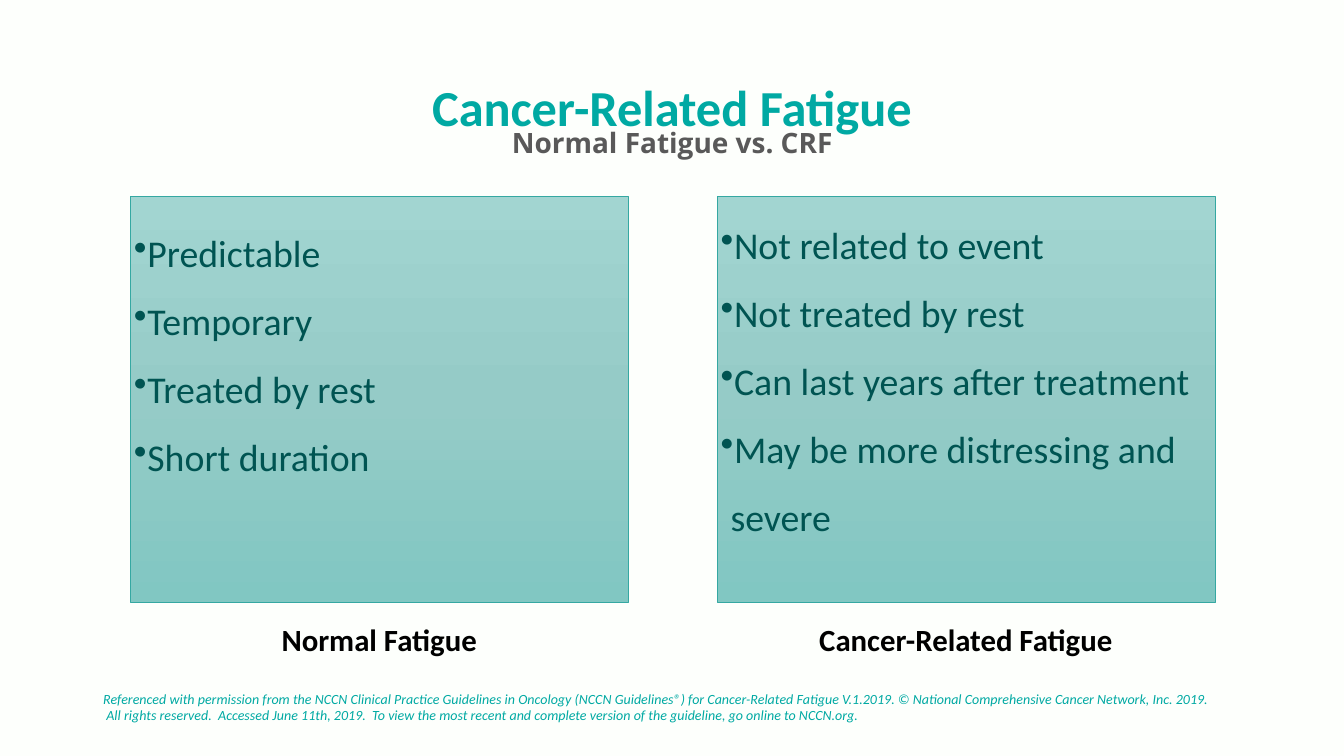
from copy import deepcopy

from lxml import etree
from pptx import Presentation
from pptx.dml import color as col
from pptx.enum import shapes, text
from pptx.oxml import ns
from pptx.util import Cm, Pt

TEAL, DEEP, GRAY = "00A9A3", "005452", "595959"
TOP, WIDE, HIGH = 9.91, 25.07, 20.42


def rgb(code):
    """Turn a hex string into a colour."""
    return col.RGBColor.from_string(code)


def write(frame, *lines, size, color, font="Calibri", bold=False,
          italic=False, align=text.PP_ALIGN.LEFT, space=None, bullet=None,
          anchor=text.MSO_ANCHOR.TOP, wrap=True):
    """Fill a text frame with formatted paragraphs."""
    frame.word_wrap = wrap
    frame.vertical_anchor = anchor
    frame.auto_size = text.MSO_AUTO_SIZE.NONE
    for i, line in enumerate(lines):
        para = frame.add_paragraph() if i else frame.paragraphs[0]
        para.text = line
        para.alignment = align
        if space:
            para.line_spacing = space
        if bullet:
            props = para._p.get_or_add_pPr()
            props.set("marL", str(Cm(0.5)))
            props.set("indent", str(-Cm(0.5)))
            etree.SubElement(props, ns.qn("a:buChar")).set("char", bullet)
        face = para.font
        face.name, face.size = font, Pt(size)
        face.bold, face.italic = bold, italic
        face.color.rgb = rgb(color)


class Deck:
    """Hold the style and the current slide."""

    def __init__(self, wide, high, back):
        """Start a deck with one title-only slide."""
        self.prs = Presentation()
        self.prs.slide_width, self.prs.slide_height = Cm(wide), Cm(high)
        self.slide = self.prs.slides.add_slide(self.prs.slide_layouts[5])
        fill = self.slide.background.fill
        fill.solid()
        fill.fore_color.rgb = rgb(back)

    def title(self, box, line, **style):
        """Place and format the title."""
        shape = self.slide.shapes.title
        shape.left, shape.top, shape.width, shape.height = map(Cm, box)
        write(shape.text_frame, line, **style)

    def label(self, box, *lines, **style):
        """Add a text box."""
        shape = self.slide.shapes.add_textbox(*map(Cm, box))
        write(shape.text_frame, *lines, **style)

    def panel(self, box, tones, edge):
        """Add a rectangle shaded from top to bottom."""
        shape = self.slide.shapes.add_shape(
            shapes.MSO_SHAPE.RECTANGLE, *map(Cm, box))
        shape.shadow.inherit = False
        shape.line.color.rgb = rgb(edge)
        shape.line.width = Pt(0.5)
        fill = shape.fill
        fill.gradient()
        fill.gradient_angle = 270
        stops = shape._element.spPr.find(".//" + ns.qn("a:gsLst"))
        stops.insert(1, deepcopy(stops[0]))
        for stop, (place, tone) in zip(fill.gradient_stops, tones):
            stop.position = place
            stop.color.rgb = rgb(tone)


def main():
    """Build the slide and save it."""
    deck = Deck(67.72, 38.1, "FDFFFC")
    mid = text.PP_ALIGN.CENTER
    head = dict(bold=True, align=mid, wrap=False,
                anchor=text.MSO_ANCHOR.MIDDLE)
    tones = [(0, "A2D5D1"), (0.5, "95CBC7"), (1, "81C7C2")]

    deck.title((8.48, 3.25, 50.77, 3.61), "Cancer-Related Fatigue",
               size=72, color=TEAL, bold=True, align=mid, space=Pt(100))
    deck.label((25.45, 6.2, 16.84, 1.96), "Normal Fatigue vs. CRF",
               size=40, color=GRAY, font="Open Sans", **head)

    sides = [
        (6.58, 10.31, 13.74, "Normal Fatigue", 10.46,
         ["Predictable", "Temporary", "Treated by rest", "Short duration"]),
        (36.14, TOP, 18.59, "Cancer-Related Fatigue", 15.47,
         ["Not related to event", "Not treated by rest",
          "Can last years after treatment",
          "May be more distressing and severe"]),
    ]
    for left, top, high, name, span, points in sides:
        deck.panel((left, TOP, WIDE, HIGH), tones, "35A8A2")
        deck.label((left - 0.08, top, 25.02, high), *points,
                   size=54, color=DEEP, space=1.5, bullet="•")
        deck.label((left + (WIDE - span) / 2, 31.17, span, 2.13), name,
                   size=44, color="000000", **head)

    deck.label(
        (4.95, 34.65, 56.29, 1.96),
        "Referenced with permission from the NCCN Clinical Practice "
        "Guidelines in Oncology (NCCN Guidelines®) for Cancer-Related "
        "Fatigue V.1.2019. © National Comprehensive Cancer Network, Inc. "
        "2019.  All rights reserved.  Accessed June 11th, 2019.  To view "
        "the most recent and complete version of the guideline, go online "
        "to NCCN.org.", size=20, color=TEAL, italic=True)
    deck.prs.save("out.pptx")


if __name__ == "__main__":
    main()
